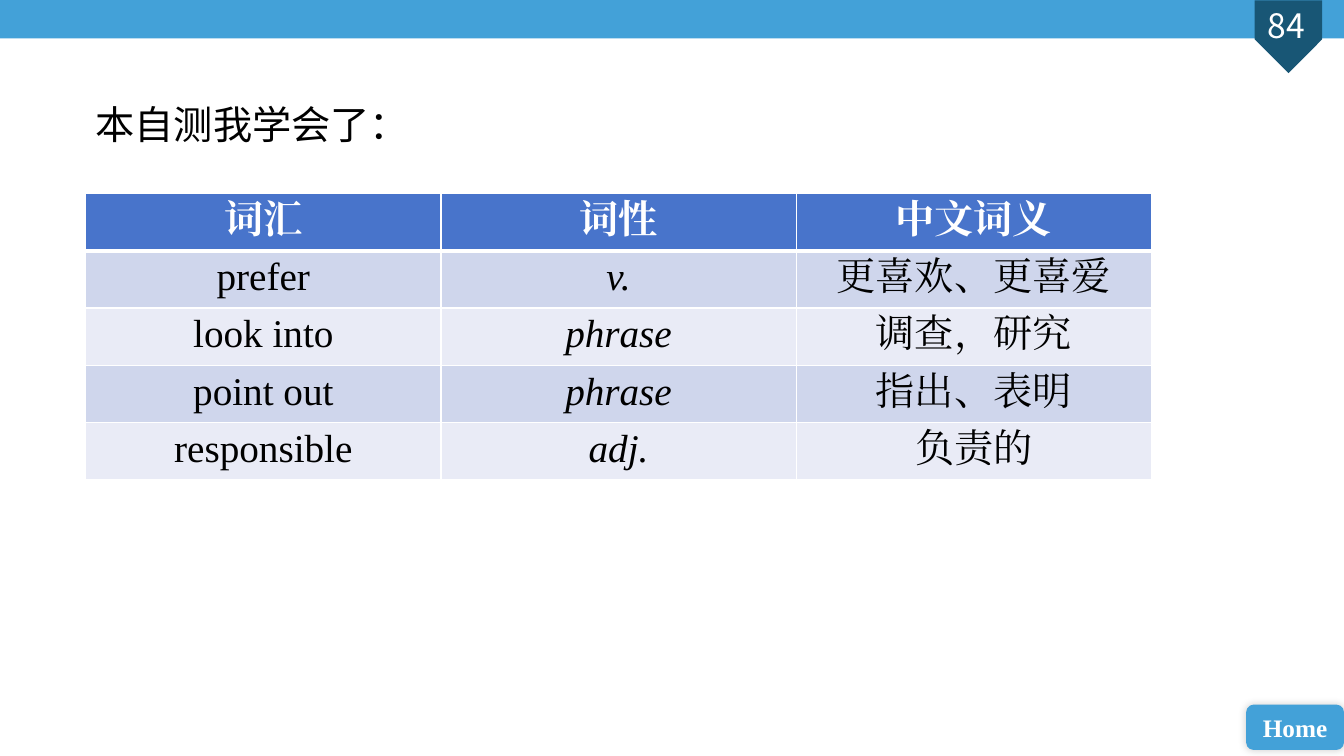
from lxml import etree
from pptx import Presentation
from pptx.dml.color import RGBColor
from pptx.enum.shapes import MSO_SHAPE
from pptx.enum.text import MSO_ANCHOR, PP_ALIGN
from pptx.oxml.ns import qn
from pptx.util import Inches, Pt

RECT = MSO_SHAPE.RECTANGLE
ROUND = MSO_SHAPE.ROUNDED_RECTANGLE
PLATE = MSO_SHAPE.PENTAGON
LEFT = PP_ALIGN.LEFT
CENTER = PP_ALIGN.CENTER
MIDDLE = MSO_ANCHOR.MIDDLE

COLORS = {
    "bar": "43A1D8",
    "tab": "185675",
    "head": "4874CB",
    "odd": "CFD6EC",
    "even": "E9EBF6",
    "white": "FFFFFF",
    "black": "000000",
}
SERIF = "Times New Roman"
SANS = "Noto Sans CJK SC"
BODY = "Calibri"

WORDS = [
    ("词汇", "词性", "中文词义"),
    ("prefer", "v.", "更喜欢、更喜爱"),
    ("look into", "phrase", "调查，研究"),
    ("point out", "phrase", "指出、表明"),
    ("responsible", "adj.", "负责的"),
]


class Page:
    def __init__(self, deck):
        self.wide = deck.slide_width
        self.high = deck.slide_height
        self.slide = deck.slides.add_slide(deck.slide_layouts[6])

    def box(self, left, top, width, height):
        return (
            round(self.wide * left / 100),
            round(self.high * top / 100),
            round(self.wide * width / 100),
            round(self.high * height / 100),
        )

    def paint(self, fill, color):
        fill.solid()
        fill.fore_color.rgb = RGBColor.from_string(COLORS[color])

    def words(self, frame, text, size, color, latin, asian, align=CENTER,
              bold=False, slant=False):
        frame.text = text
        para = frame.paragraphs[0]
        para.alignment = align
        for run in para.runs:
            font = run.font
            font.size = Pt(size)
            font.name = latin
            font.bold = bold
            font.italic = slant
            font.color.rgb = RGBColor.from_string(COLORS[color])
            etree.SubElement(font._element, qn("a:ea"), typeface=asian)

    def shape(self, kind, area, color, turn=0):
        item = self.slide.shapes.add_shape(kind, *self.box(*area))
        item.shadow.inherit = False
        item.rotation = turn
        item.line.fill.background()
        self.paint(item.fill, color)
        return item

    def label(self, area, text, *style, **more):
        frame = self.slide.shapes.add_textbox(*self.box(*area)).text_frame
        frame.word_wrap = True
        self.words(frame, text, *style, **more)

    def button(self, area, text):
        item = self.shape(ROUND, area, "bar")
        glow = etree.SubElement(
            item._element.spPr.find(qn("a:effectLst")), qn("a:outerShdw"),
            blurRad=str(Pt(6)), dist="0", dir="18900000", rotWithShape="0")
        tint = etree.SubElement(glow, qn("a:srgbClr"), val=COLORS["black"])
        etree.SubElement(tint, qn("a:alpha"), val="20000")
        item.text_frame.vertical_anchor = MIDDLE
        self.words(item.text_frame, text, 18, "white", SERIF, SERIF, bold=True)

    def border(self, cell, sides):
        props = cell._tc.get_or_add_tcPr()
        for spot, (side, width) in enumerate(sides.items()):
            line = etree.Element(qn("a:" + side), w=str(Pt(width)))
            fill = etree.SubElement(line, qn("a:solidFill"))
            etree.SubElement(fill, qn("a:srgbClr"), val=COLORS["white"])
            props.insert(spot, line)

    def table(self, area, rows):
        grid = self.slide.shapes.add_table(
            len(rows), len(rows[0]), *self.box(*area)).table
        for r, row in enumerate(rows):
            head = r == 0
            back = "head" if head else "odd" if r % 2 else "even"
            for c, text in enumerate(row):
                cell = grid.cell(r, c)
                self.paint(cell.fill, back)
                self.border(cell, {"lnL": 1, "lnR": 1,
                                   "lnT": 3 if r == 1 else 1,
                                   "lnB": 3 if head else 1})
                self.words(cell.text_frame, text, 28,
                           "white" if head else "black", SERIF, SERIF,
                           bold=head, slant=not head and c == 1)


def main():
    deck = Presentation()
    deck.slide_width = Inches(13.33)
    deck.slide_height = Inches(7.5)
    page = Page(deck)
    page.shape(RECT, (0, 0, 100, 5.07), "bar")
    page.shape(PLATE, (93.17, 0.4, 5.4, 8.93), "tab", turn=90)
    page.label((92.05, 0, 7.35, 6.67), "84", 24, "white", SANS, SANS)
    page.button((92.72, 93.2, 7.28, 6), "Home")
    page.table((6.38, 25.6, 79.29, 37.7), WORDS)
    page.label((6.38, 12.67, 29.03, 7.6), "本自测我学会了：", 28, "black",
               BODY, SANS, align=LEFT)
    deck.save("out.pptx")


if __name__ == "__main__":
    main()
